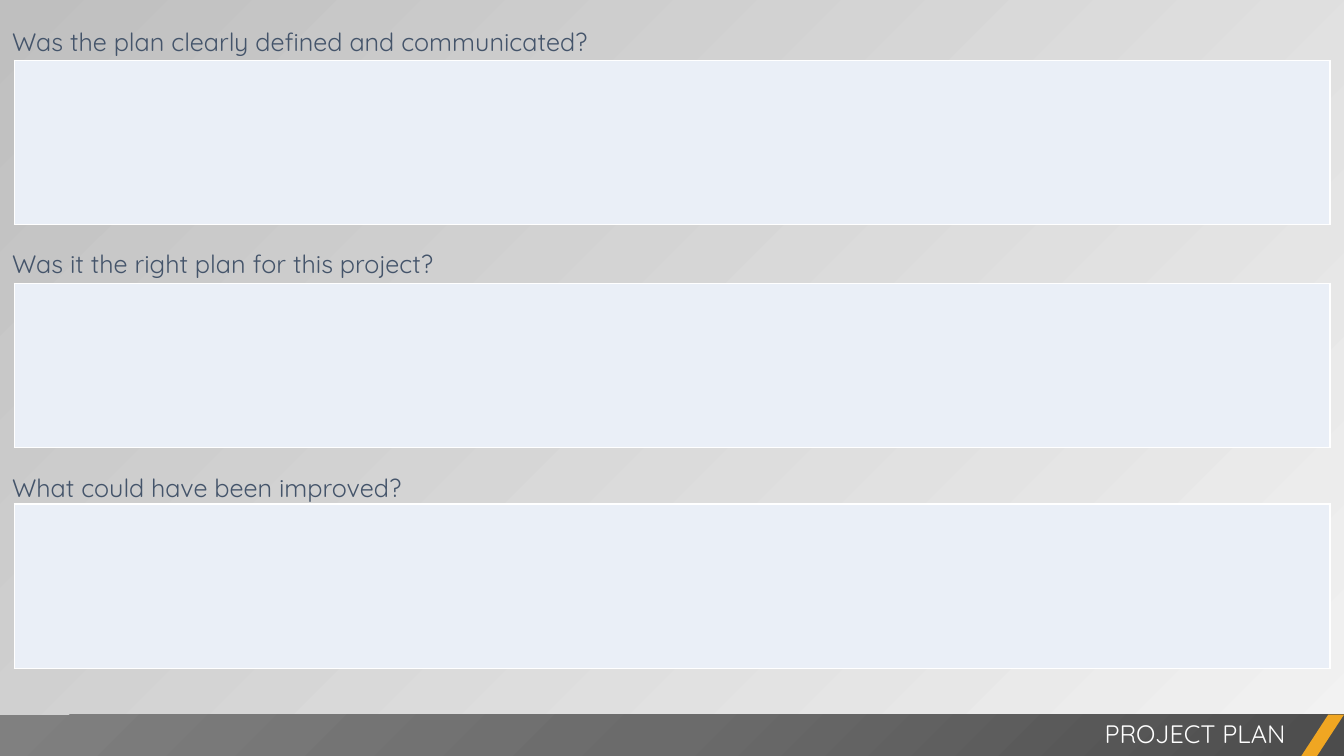
from pptx import Presentation
from pptx.dml.color import RGBColor
from pptx.enum.shapes import MSO_SHAPE
from pptx.enum.text import MSO_ANCHOR, MSO_AUTO_SIZE, PP_ALIGN
from pptx.oxml import parse_xml
from pptx.oxml.ns import nsdecls
from pptx.util import Inches, Pt

RECTANGLE = MSO_SHAPE.RECTANGLE
PARALLELOGRAM = MSO_SHAPE.PARALLELOGRAM
TOP = MSO_ANCHOR.TOP
GROW = MSO_AUTO_SIZE.SHAPE_TO_FIT_TEXT
LEFT, RIGHT = PP_ALIGN.LEFT, PP_ALIGN.RIGHT

FONT = "Quicksand"
SLATE, WHITE, PALE_BLUE, AMBER = "44546A", "FFFFFF", "EAEFF7", "F0A622"
FOOTER_STOPS = [(0, "4C4C4C"), (50, "6B6B6B"), (100, "808080")]
FOOTER_TOP, FOOTER_HEIGHT = 7.09, 0.42

# Question, label top, label height, line spacing, answer top
QUESTIONS = [
    ("Was the plan clearly defined and communicated?", 0.2, 0.41, Pt(21.5), 0.6),
    ("Was it the right plan for this project?", 2.41, 0.41, Pt(21.5), 2.81),
    ("What could have been improved?", 4.57, 0.45, 1.2, 5),
]


def color(hex_value):
    return RGBColor.from_string(hex_value)


def set_background(slide):
    fill = slide.background.fill
    fill.gradient()
    fill.gradient_angle = 135
    for stop, shade in zip(fill.gradient_stops, ("F2F2F2", "BFBFBF")):
        stop.color.rgb = color(shade)


def write_line(frame, text, shade, align):
    frame.word_wrap = True
    frame.auto_size = GROW
    frame.vertical_anchor = TOP
    paragraph = frame.paragraphs[0]
    paragraph.alignment = align
    run = paragraph.add_run()
    run.text = text
    run.font.name = FONT
    run.font.size = Pt(18)
    run.font.color.rgb = color(shade)
    return paragraph


def add_question(slide, text, top, height, spacing):
    label = slide.shapes.add_textbox(Inches(0), Inches(top), Inches(7.63), Inches(height))
    frame = label.text_frame
    frame.margin_left = frame.margin_right = Inches(0.12)
    frame.margin_top = frame.margin_bottom = Inches(0.06)
    write_line(frame, text, SLATE, LEFT).line_spacing = spacing


def add_answer_box(slide, top):
    answer = slide.shapes.add_table(
        1, 1, Inches(0.14), Inches(top), Inches(13.05), Inches(1.63)).table
    answer.first_row = answer.horz_banding = False
    cell = answer.cell(0, 0)
    properties = cell._tc.get_or_add_tcPr()
    for side in ("lnL", "lnR", "lnT", "lnB"):
        properties.append(parse_xml(
            f'<a:{side} {nsdecls("a")} w="12700"><a:solidFill>'
            f'<a:srgbClr val="{WHITE}"/></a:solidFill></a:{side}>'))
    cell.fill.solid()
    cell.fill.fore_color.rgb = color(PALE_BLUE)


def add_footer_shape(slide, preset, left, width):
    shape = slide.shapes.add_shape(
        preset, Inches(left), Inches(FOOTER_TOP), Inches(width), Inches(FOOTER_HEIGHT))
    shape.shadow.inherit = False
    shape.line.fill.background()
    return shape


def add_footer(slide):
    # Bar with a gradient spreading from its lower right corner
    bar = add_footer_shape(slide, RECTANGLE, 0, 13.33)
    stops = "".join(
        f'<a:gs pos="{position * 1000}"><a:srgbClr val="{shade}"/></a:gs>'
        for position, shade in FOOTER_STOPS)
    bar._element.spPr.insert(2, parse_xml(
        f'<a:gradFill {nsdecls("a")} rotWithShape="1"><a:gsLst>{stops}</a:gsLst>'
        '<a:path path="circle"><a:fillToRect l="100000" t="100000"/></a:path>'
        '</a:gradFill>'))

    # Slanted accent
    accent = add_footer_shape(slide, PARALLELOGRAM, 12.9, 0.43)
    accent.adjustments[0] = 0.652
    accent.fill.solid()
    accent.fill.fore_color.rgb = color(AMBER)

    # Title, raised above the bar
    title = slide.shapes.title
    title.left, title.top = Inches(5.25), Inches(7.08)
    title.width, title.height = Inches(7.6), Inches(0.4)
    write_line(title.text_frame, "PROJECT PLAN", WHITE, RIGHT)
    slide.shapes._spTree.append(title._element)


def main():
    deck = Presentation()
    deck.slide_width, deck.slide_height = Inches(13.33), Inches(7.5)
    slide = deck.slides.add_slide(deck.slide_layouts[5])
    set_background(slide)
    for question, label_top, label_height, spacing, answer_top in QUESTIONS:
        add_answer_box(slide, answer_top)
        add_question(slide, question, label_top, label_height, spacing)
    add_footer(slide)
    deck.save("out.pptx")


if __name__ == "__main__":
    main()
